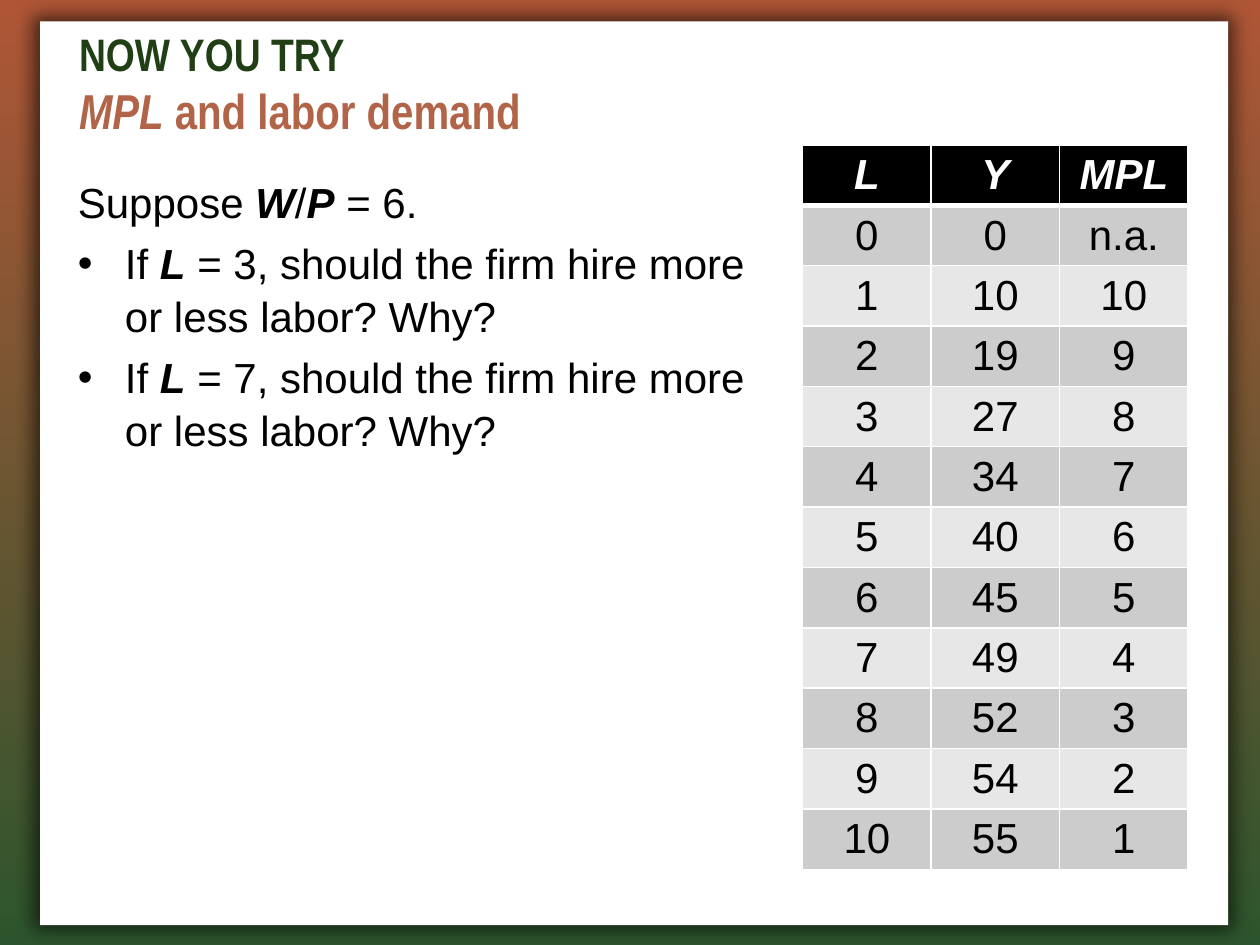
from lxml.etree import SubElement
from pptx import Presentation
from pptx.dml.color import RGBColor
from pptx.enum.shapes import MSO_SHAPE
from pptx.enum.text import MSO_ANCHOR, MSO_AUTO_SIZE, PP_ALIGN
from pptx.oxml import parse_xml
from pptx.oxml.ns import nsdecls, qn
from pptx.util import Cm, Pt

COLORS = {
    "rust": "AF5636", "moss": "2D552D", "green": "203F15", "clay": "B16447",
    "white": "FFFFFF", "black": "000000", "dark": "CCCCCC", "light": "E7E7E7",
}


def color(name):
    return RGBColor.from_string(COLORS[name])


def write(par, text, size, tint, font="Arial", bold=None):
    """Add text to a paragraph; parts between asterisks are italic.

    Without a value for bold, the italic parts are bold as well.
    """
    for i, part in enumerate(text.split("*")):
        if part:
            run = par.add_run()
            run.text = part
            run.font.name = font
            run.font.size = Pt(size)
            run.font.italic = i % 2 == 1
            run.font.bold = i % 2 == 1 if bold is None else bold
            run.font.color.rgb = color(tint)


deck = Presentation()
deck.slide_width, deck.slide_height = Cm(25.4), Cm(19.05)
slide = deck.slides.add_slide(deck.slide_layouts[5])

# Background and white sheet
back = slide.background.fill
back.gradient()
back.gradient_angle = 270
for stop, name, pos in zip(back.gradient_stops, ("rust", "moss"), (0, 1)):
    stop.color.rgb = color(name)
    stop.position = pos

sheet = slide.shapes.add_shape(
    MSO_SHAPE.RECTANGLE, Cm(0.81), Cm(0.43), Cm(23.95), Cm(18.22))
sheet.fill.solid()
sheet.fill.fore_color.rgb = color("white")
sheet.line.fill.background()
sheet._element.spPr.append(parse_xml(
    f'<a:effectLst {nsdecls("a")}><a:outerShdw blurRad="{Pt(10)}" dist="0" '
    f'sx="101000" sy="101000" algn="ctr" rotWithShape="0">'
    f'<a:srgbClr val="{COLORS["black"]}"><a:alpha val="60000"/></a:srgbClr>'
    '</a:outerShdw></a:effectLst>'))

# Title
title = slide.shapes.title
title._element.addprevious(sheet._element)
title.left, title.top, title.width, title.height = (
    Cm(1.34), Cm(0.48), Cm(22.5), Cm(2.39))
title.fill.solid()
title.fill.fore_color.rgb = color("white")
frame = title.text_frame
frame.auto_size = MSO_AUTO_SIZE.NONE
frame.vertical_anchor = MSO_ANCHOR.MIDDLE
frame.margin_right = Cm(1.27)
head = frame.paragraphs[0]
head.alignment = PP_ALIGN.LEFT
write(head, "NOW YOU TRY", 26, "green", "Arial Narrow", True)
head.add_line_break()
write(head, "*MPL* and labor demand", 28, "clay", "Arial Narrow", True)

# Question with bullets
LINES = [
    "Suppose *W*/*P* = 6.",
    "If *L* = 3, should the firm hire more or less labor? Why?",
    "If *L* = 7, should the firm hire more or less labor? Why?",
]
body = slide.shapes.add_textbox(Cm(1.32), Cm(3.38), Cm(14.76), Cm(14.45))
frame = body.text_frame
frame.word_wrap = True
for i, line in enumerate(LINES):
    par = frame.paragraphs[0] if i == 0 else frame.add_paragraph()
    par.line_spacing = 1.05
    par.space_before = Pt(4.8)
    write(par, line, 24, "black")
    if i > 0:
        props = par._p.get_or_add_pPr()
        props.set("marL", str(Cm(0.95)))
        props.set("indent", str(-Cm(0.95)))
        SubElement(props, qn("a:buFont"), typeface="Arial")
        SubElement(props, qn("a:buChar"), char="•")

# Table of output and marginal product
OUTPUT = [0, 10, 19, 27, 34, 40, 45, 49, 52, 54, 55]
rows = [("*L*", "*Y*", "*MPL*"), (0, 0, "n.a.")]
rows += [(n, OUTPUT[n], OUTPUT[n] - OUTPUT[n - 1])
         for n in range(1, len(OUTPUT))]
table = slide.shapes.add_table(
    len(rows), 3, Cm(16.18), Cm(2.92), Cm(7.77), Cm(14.4)).table
for r, row in enumerate(rows):
    table.rows[r].height = Cm(1.2)
    shade = "black" if r == 0 else "dark" if r % 2 else "light"
    for c, value in enumerate(row):
        cell = table.cell(r, c)
        cell.margin_top = cell.margin_bottom = Cm(0.1)
        cell.vertical_anchor = MSO_ANCHOR.MIDDLE
        par = cell.text_frame.paragraphs[0]
        par.alignment = PP_ALIGN.CENTER
        write(par, str(value), 24, "white" if r == 0 else "black")
        props = cell._tc.get_or_add_tcPr()
        for side in "LRTB":
            thick = (r, side) in ((0, "B"), (1, "T"))
            edge = SubElement(props, qn(f"a:ln{side}"),
                              w=str(Pt(3 if thick else 1)))
            paint = SubElement(edge, qn("a:solidFill"))
            SubElement(paint, qn("a:srgbClr"), val=COLORS["white"])
        cell.fill.solid()
        cell.fill.fore_color.rgb = color(shade)

deck.save("out.pptx")
